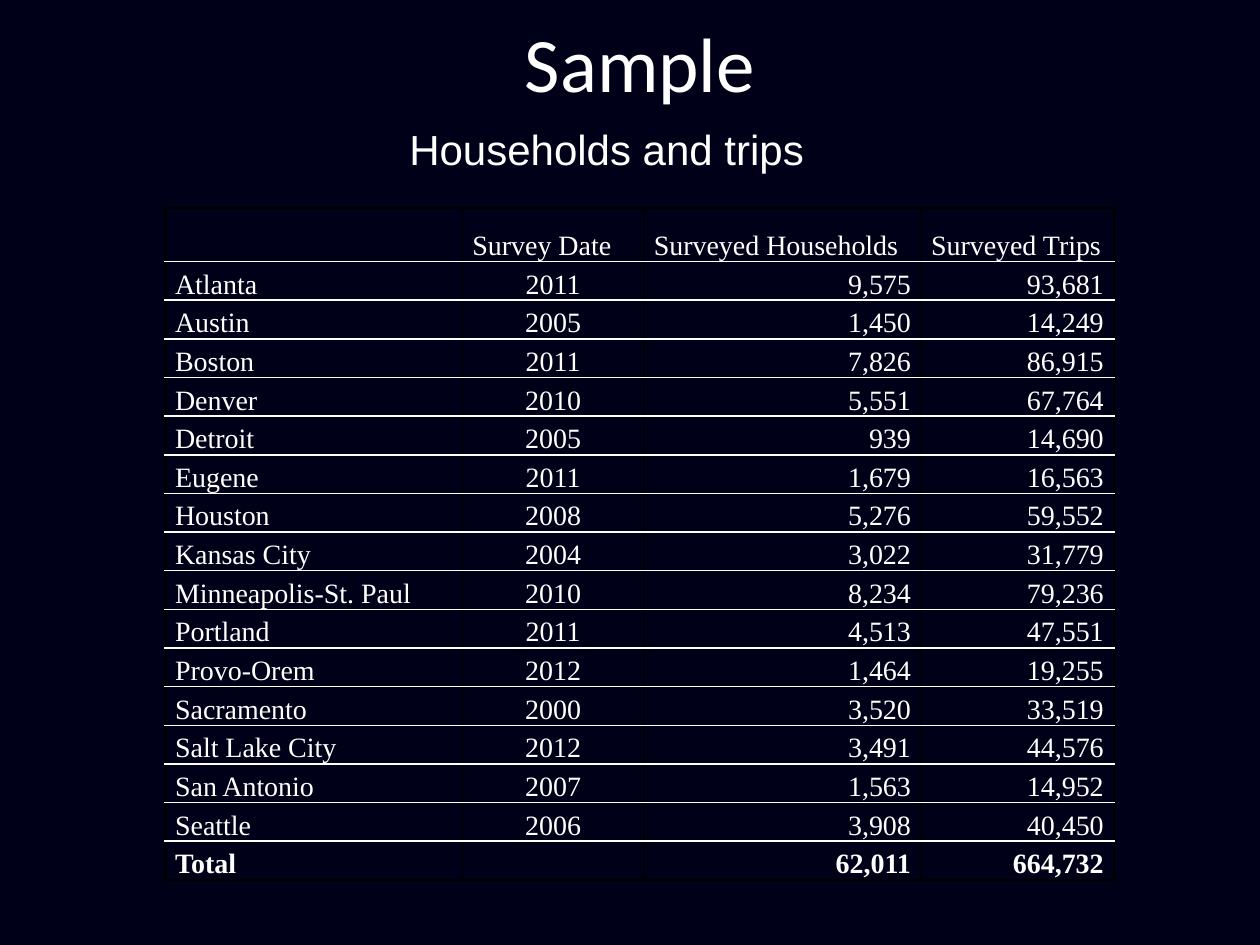
from dataclasses import dataclass

from lxml import etree
from pptx import Presentation
from pptx import util as u
from pptx.dml.color import RGBColor
from pptx.enum import text
from pptx.oxml import ns

COLORS = {"background": "000018", "text": "FFFFFF", "rule": "FFFFFF", "edge": "000000"}
WIDTH, HEIGHT = u.Inches(10), u.Inches(7.5)
LEFT, CENTER, RIGHT = text.PP_ALIGN.LEFT, text.PP_ALIGN.CENTER, text.PP_ALIGN.RIGHT


@dataclass(frozen=True)
class Area:
    left: float
    top: float
    width: float
    height: float

    def lengths(self) -> tuple[int, ...]:
        return (int(self.left * WIDTH), int(self.top * HEIGHT),
                int(self.width * WIDTH), int(self.height * HEIGHT))


@dataclass(frozen=True)
class Label:
    words: str
    area: Area
    font: str
    size: int
    align: int
    anchor: int


@dataclass(frozen=True)
class Column:
    heading: str
    share: float
    align: int


LABELS = [
    Label("Households and trips", Area(0.315, 0.124, 0.366, 0.083), "Arial", 24,
          LEFT, text.MSO_ANCHOR.TOP),
    Label("Sample", Area(0.108, 0.023, 0.8, 0.085), "Calibri", 44,
          CENTER, text.MSO_ANCHOR.MIDDLE),
]
TABLE_AREA = Area(0.131, 0.22, 0.753, 0.71)
HEADER_SHARE = 0.08
COLUMNS = [
    Column("", 2.36 / 7.53, LEFT),
    Column("Survey Date", 1.44 / 7.53, CENTER),
    Column("Surveyed Households", 2.2 / 7.53, RIGHT),
    Column("Surveyed Trips", 1.53 / 7.53, RIGHT),
]
SURVEYS = [
    ("Atlanta", "2011", "9,575", "93,681"),
    ("Austin", "2005", "1,450", "14,249"),
    ("Boston", "2011", "7,826", "86,915"),
    ("Denver", "2010", "5,551", "67,764"),
    ("Detroit", "2005", "939", "14,690"),
    ("Eugene", "2011", "1,679", "16,563"),
    ("Houston", "2008", "5,276", "59,552"),
    ("Kansas City", "2004", "3,022", "31,779"),
    ("Minneapolis-St. Paul", "2010", "8,234", "79,236"),
    ("Portland", "2011", "4,513", "47,551"),
    ("Provo-Orem", "2012", "1,464", "19,255"),
    ("Sacramento", "2000", "3,520", "33,519"),
    ("Salt Lake City", "2012", "3,491", "44,576"),
    ("San Antonio", "2007", "1,563", "14,952"),
    ("Seattle", "2006", "3,908", "40,450"),
    ("Total", "", "62,011", "664,732"),
]


def style_paragraph(p, font: str, size: int, align: int, bold: bool = False) -> None:
    p.alignment = align
    for r in p.runs:
        r.font.name = font
        r.font.size = u.Pt(size)
        r.font.bold = bold
        r.font.color.rgb = RGBColor.from_string(COLORS["text"])


def add_label(s, label: Label) -> None:
    sp = s.shapes.add_textbox(*label.area.lengths())
    tf = sp.text_frame
    tf.word_wrap = True
    tf.vertical_anchor = label.anchor
    tf.text = label.words
    style_paragraph(tf.paragraphs[0], label.font, label.size, label.align)


def set_borders(cell, top: str, bottom: str) -> None:
    sides = {"lnL": "edge", "lnR": "edge", "lnT": top, "lnB": bottom}
    tc_pr = cell._tc.get_or_add_tcPr()
    for i, (side, color) in enumerate(sides.items()):
        ln = etree.Element(ns.qn(f"a:{side}"), w=str(u.Pt(1)))
        fill = etree.SubElement(ln, ns.qn("a:solidFill"))
        etree.SubElement(fill, ns.qn("a:srgbClr"), val=COLORS[color])
        tc_pr.insert(i, ln)


def fill_cell(cell, words: str, align: int, bold: bool) -> None:
    cell.fill.background()
    cell.margin_left = cell.margin_right = u.Inches(0.08)
    cell.margin_top = cell.margin_bottom = 0
    cell.vertical_anchor = text.MSO_ANCHOR.BOTTOM
    if words:
        cell.text_frame.text = words
        p = cell.text_frame.paragraphs[0]
        p.line_spacing = 1.15
        style_paragraph(p, "Times New Roman", 16, align, bold)


def add_survey_table(s) -> None:
    rows = [tuple(c.heading for c in COLUMNS), *SURVEYS]
    last = len(rows) - 1
    left, top, width, height = TABLE_AREA.lengths()
    table = s.shapes.add_table(len(rows), len(COLUMNS), left, top, width, height).table
    table.first_row = table.horz_banding = False
    for j, column in enumerate(COLUMNS):
        table.columns[j].width = int(column.share * width)
    for i, row in enumerate(rows):
        share = HEADER_SHARE if i == 0 else (1 - HEADER_SHARE) / last
        table.rows[i].height = int(share * height)
        for j, words in enumerate(row):
            cell = table.cell(i, j)
            fill_cell(cell, words, COLUMNS[j].align if i else LEFT, i == last)
            set_borders(cell, "rule" if i else "edge", "rule" if i < last else "edge")


def main() -> None:
    prs = Presentation()
    prs.slide_width, prs.slide_height = WIDTH, HEIGHT
    s = prs.slides.add_slide(prs.slide_layouts[6])
    s.background.fill.solid()
    s.background.fill.fore_color.rgb = RGBColor.from_string(COLORS["background"])
    for label in LABELS:
        add_label(s, label)
    add_survey_table(s)
    prs.save("out.pptx")


if __name__ == "__main__":
    main()
